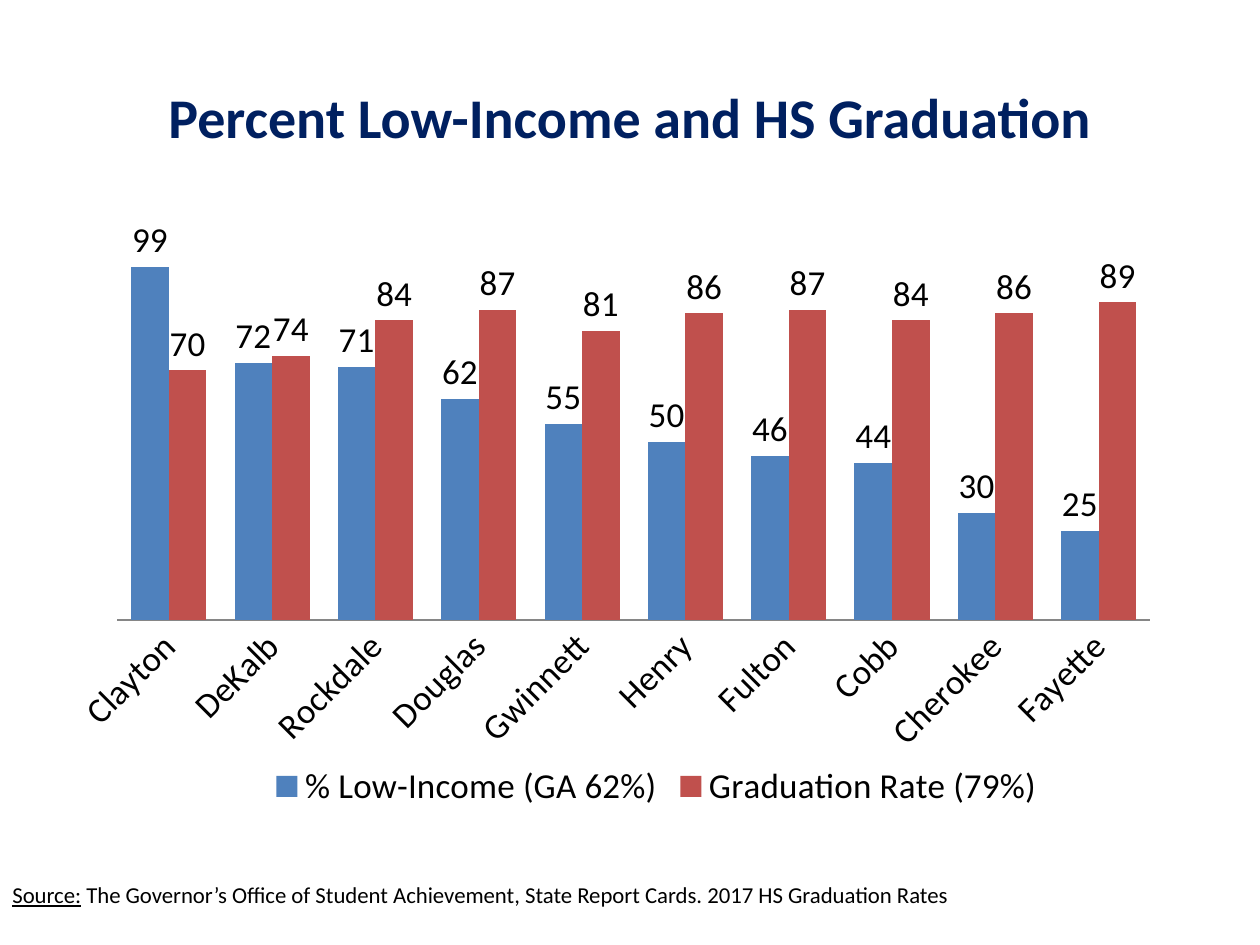
"""Build a slide comparing low-income share and graduation rate by county."""
import pptx
import pptx.chart.data
import pptx.dml.color
import pptx.enum.chart
import pptx.enum.text
import pptx.oxml
import pptx.oxml.ns
import pptx.util

Cm = pptx.util.Cm
Pt = pptx.util.Pt
RGBColor = pptx.dml.color.RGBColor

NAVY = RGBColor(0x00, 0x20, 0x60)
BLACK = RGBColor(0x00, 0x00, 0x00)
BLUE = RGBColor(0x4F, 0x81, 0xBD)
RED = RGBColor(0xC0, 0x50, 0x4D)
GREY = RGBColor(0x86, 0x86, 0x86)

COUNTIES = ["Clayton", "DeKalb", "Rockdale", "Douglas", "Gwinnett",
            "Henry", "Fulton", "Cobb", "Cherokee", "Fayette"]
SERIES = [
    ("% Low-Income (GA 62%)", BLUE, [99, 72, 71, 62, 55, 50, 46, 44, 30, 25]),
    ("Graduation Rate (79%)", RED, [70, 74, 84, 87, 81, 86, 87, 84, 86, 89]),
]


def set_attributes(target, values):
    for name, value in values.items():
        setattr(target, name, value)


def make_layout(left, top, width, height, inner=False):
    values = {"xMode": "edge", "yMode": "edge",
              "x": left, "y": top, "w": width, "h": height}
    if inner:
        values = {"layoutTarget": "inner", **values}
    items = "".join(f'<c:{name} val="{value}"/>' for name, value in values.items())
    namespace = pptx.oxml.ns.nsdecls("c")
    return pptx.oxml.parse_xml(
        f"<c:layout {namespace}><c:manualLayout>{items}</c:manualLayout></c:layout>")


class SlideBuilder:
    """Hold the style and the current slide."""

    font_name = "Calibri"

    def __init__(self, slide):
        self.slide = slide

    def style_font(self, font, size, color=BLACK, **values):
        set_attributes(font, {"name": self.font_name, "size": Pt(size), **values})
        font.color.rgb = color

    def add_text(self, box, runs, size, color=BLACK, anchor="TOP", **paragraph_values):
        shape = self.slide.shapes.add_textbox(*map(Cm, box))
        frame = shape.text_frame
        set_attributes(frame, {
            "word_wrap": True,
            "vertical_anchor": getattr(pptx.enum.text.MSO_ANCHOR, anchor),
        })
        paragraph = frame.paragraphs[0]
        set_attributes(paragraph, paragraph_values)
        for text, values in runs:
            run = paragraph.add_run()
            run.text = text
            self.style_font(run.font, size, color, **values)

    def add_column_chart(self, box, categories, series_list, size, plot_box, legend_box):
        data = pptx.chart.data.CategoryChartData(number_format="0")
        data.categories = categories
        for name, _, values in series_list:
            data.add_series(name, values)
        chart = self.slide.shapes.add_chart(
            pptx.enum.chart.XL_CHART_TYPE.COLUMN_CLUSTERED, *map(Cm, box), data).chart
        self.style_font(chart.font, size)
        set_attributes(chart, {"has_title": False, "has_legend": True})
        set_attributes(chart.legend, {
            "position": pptx.enum.chart.XL_LEGEND_POSITION.BOTTOM,
            "include_in_layout": False,
        })
        self.style_font(chart.legend.font, size)
        self.style_axes(chart, size)
        self.style_columns(chart.plots[0], series_list, size)
        self.place_parts(chart, plot_box, legend_box)

    def style_axes(self, chart, size):
        set_attributes(chart.value_axis, {
            "visible": False, "has_major_gridlines": False,
            "minimum_scale": 0, "maximum_scale": 120,
        })
        axis = chart.category_axis
        no_tick = pptx.enum.chart.XL_TICK_MARK.NONE
        set_attributes(axis, {"major_tick_mark": no_tick, "minor_tick_mark": no_tick})
        axis.format.line.color.rgb = GREY
        self.style_font(axis.tick_labels.font, size)
        body = axis._element.find(".//" + pptx.oxml.ns.qn("a:bodyPr"))
        body.set("rot", "-2700000")
        body.set("vert", "horz")

    def style_columns(self, plot, series_list, size):
        set_attributes(plot, {"gap_width": 75, "overlap": 0, "vary_by_categories": False})
        for series, (_, color, _) in zip(plot.series, series_list):
            series.format.fill.solid()
            series.format.fill.fore_color.rgb = color
            labels = series.data_labels
            set_attributes(labels, {
                "show_value": True, "number_format": "0", "number_format_is_linked": False,
                "position": pptx.enum.chart.XL_LABEL_POSITION.OUTSIDE_END,
            })
            self.style_font(labels.font, size)

    def place_parts(self, chart, plot_box, legend_box):
        qn = pptx.oxml.ns.qn
        plot_area = chart._chartSpace.find(".//" + qn("c:plotArea"))
        legend = chart.legend._element
        for parent in (plot_area, legend):
            for layout in parent.findall(qn("c:layout")):
                parent.remove(layout)
        plot_area.insert(0, make_layout(*plot_box, inner=True))
        legend.find(qn("c:legendPos")).addnext(make_layout(*legend_box))


def main():
    presentation = pptx.Presentation()
    set_attributes(presentation, {"slide_width": Cm(25.4), "slide_height": Cm(19.05)})
    builder = SlideBuilder(presentation.slides.add_slide(presentation.slide_layouts[6]))
    builder.add_text(
        (1.27, 0.76, 22.86, 3.18),
        [("Percent Low-Income and HS Graduation", {"bold": True})],
        32, NAVY, "MIDDLE", alignment=pptx.enum.text.PP_ALIGN.CENTER)
    builder.add_text(
        (0, 17.83, 22.23, 0.58),
        [("Source:", {"underline": True}),
         (" The Governor’s Office of Student Achievement, State Report Cards. "
          "2017 HS Graduation Rates", {})],
        13, line_spacing=0.6, space_before=Pt(6.5))
    builder.add_column_chart(
        (0.76, 3.07, 22.89, 15.98), COUNTIES, SERIES, 20,
        plot_box=(0.07, 0.05, 0.91, 0.54), legend_box=(0.2, 0.76, 0.69, 0.08))
    presentation.save("out.pptx")


if __name__ == "__main__":
    main()
